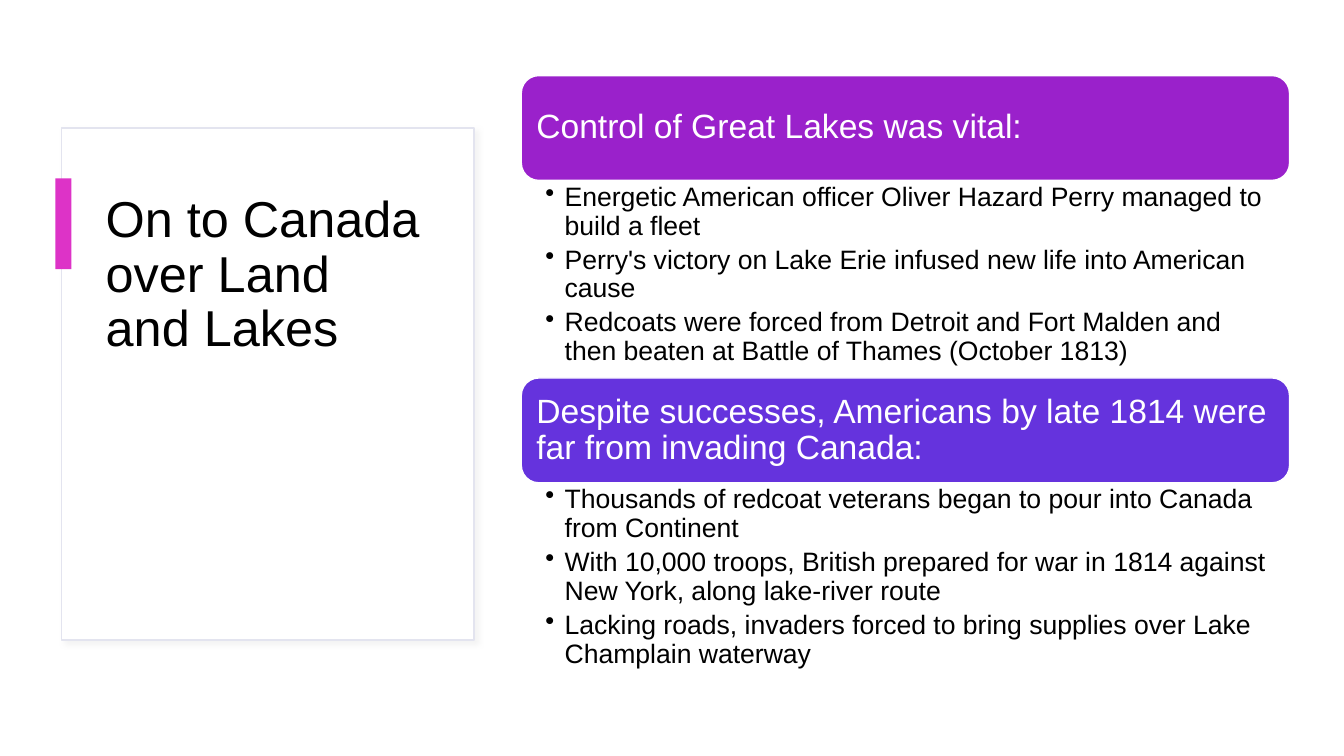
from dataclasses import dataclass

from lxml import etree
from pptx import Presentation
from pptx.dml.color import RGBColor
from pptx.enum.shapes import MSO_SHAPE
from pptx.enum.text import MSO_ANCHOR, PP_ALIGN
from pptx.oxml.ns import qn
from pptx.shapes.autoshape import Shape
from pptx.slide import Slide
from pptx.text.text import TextFrame
from pptx.util import Inches, Pt

RECTANGLE = MSO_SHAPE.RECTANGLE
ROUNDED_RECTANGLE = MSO_SHAPE.ROUNDED_RECTANGLE
TOP, MIDDLE = MSO_ANCHOR.TOP, MSO_ANCHOR.MIDDLE
LEFT = PP_ALIGN.LEFT

WHITE = RGBColor(0xFF, 0xFF, 0xFF)
BLACK = RGBColor(0x00, 0x00, 0x00)
CARD_LINE = RGBColor(0xE3, 0xE4, 0xEF)
SHADOW_GREY = RGBColor(0xD9, 0xD9, 0xD9)
PINK = RGBColor(0xDD, 0x33, 0xC7)
PURPLE = RGBColor(0x9A, 0x21, 0xCB)
VIOLET = RGBColor(0x65, 0x33, 0xDD)

FONT = "Arial"
SECTION_LEFT, SECTION_TOP, SECTION_WIDTH = 5.17, 0.75, 7.62
HEADER_HEIGHT, BULLETS_HEIGHT = 1.04, 1.96
BULLET_INDENT = 0.19


@dataclass(frozen=True)
class Box:
    left: float
    top: float
    width: float
    height: float

    def lengths(self) -> list[Inches]:
        return [Inches(value) for value in (self.left, self.top, self.width, self.height)]


@dataclass(frozen=True)
class Section:
    heading: str
    color: RGBColor
    bullets: tuple[str, ...]


SECTIONS = (
    Section("Control of Great Lakes was vital:", PURPLE, (
        "Energetic American officer Oliver Hazard Perry managed to build a fleet",
        "Perry's victory on Lake Erie infused new life into American cause",
        "Redcoats were forced from Detroit and Fort Malden and then beaten at "
        "Battle of Thames (October 1813)",
    )),
    Section("Despite successes, Americans by late 1814 were far from invading Canada:", VIOLET, (
        "Thousands of redcoat veterans began to pour into Canada from Continent",
        "With 10,000 troops, British prepared for war in 1814 against New York, "
        "along lake-river route",
        "Lacking roads, invaders forced to bring supplies over Lake Champlain waterway",
    )),
)


def add_filled_shape(slide: Slide, kind: MSO_SHAPE, box: Box, fill: RGBColor,
                     line: RGBColor | None = None) -> Shape:
    shape = slide.shapes.add_shape(kind, *box.lengths())
    shape.shadow.inherit = False
    shape.fill.solid()
    shape.fill.fore_color.rgb = fill
    if line is None:
        shape.line.fill.background()
    else:
        shape.line.color.rgb = line
        shape.line.width = Pt(1)
    return shape


def add_soft_shadow(shape: Shape) -> None:
    effects = shape._element.spPr.find(qn("a:effectLst"))
    shadow = etree.SubElement(effects, qn("a:outerShdw"), blurRad=str(Pt(4)),
                              dist=str(Pt(3)), dir="2700000", algn="tl", rotWithShape="0")
    color = etree.SubElement(shadow, qn("a:srgbClr"), val=str(SHADOW_GREY))
    etree.SubElement(color, qn("a:alpha"), val="30000")


def write_paragraphs(frame: TextFrame, texts: tuple[str, ...], size: float, color: RGBColor,
                     anchor: MSO_ANCHOR, space_after: float = 0) -> None:
    frame.word_wrap = True
    frame.vertical_anchor = anchor
    frame.text = "\n".join(texts)
    for paragraph in frame.paragraphs:
        paragraph.alignment = LEFT
        paragraph.line_spacing = 0.9
        paragraph.space_after = Pt(space_after)
        paragraph.font.name = FONT
        paragraph.font.size = Pt(size)
        paragraph.font.color.rgb = color


def set_margins(frame: TextFrame, left: float, right: float, vertical: float) -> None:
    frame.margin_left, frame.margin_right = Inches(left), Inches(right)
    frame.margin_top = frame.margin_bottom = Inches(vertical)


def add_bullet_marks(frame: TextFrame) -> None:
    for paragraph in frame.paragraphs:
        properties = paragraph._p.get_or_add_pPr()
        properties.set("marL", str(Inches(BULLET_INDENT)))
        properties.set("indent", str(-Inches(BULLET_INDENT)))
        mark = etree.Element(qn("a:buChar"), char="•")
        properties.find(qn("a:defRPr")).addprevious(mark)


def add_title_card(slide: Slide) -> None:
    card = add_filled_shape(slide, RECTANGLE, Box(0.61, 1.27, 4.09, 5.08), WHITE, CARD_LINE)
    add_soft_shadow(card)
    title = slide.shapes.add_textbox(*Box(0.95, 1.88, 3.38, 3.85).lengths())
    write_paragraphs(title.text_frame, ("On to Canada over Land and Lakes",), 36, BLACK, TOP)
    add_filled_shape(slide, RECTANGLE, Box(0.55, 1.77, 0.16, 0.9), PINK)


def add_section(slide: Slide, section: Section, top: float) -> None:
    header_box = Box(SECTION_LEFT, top, SECTION_WIDTH, HEADER_HEIGHT)
    header = add_filled_shape(slide, ROUNDED_RECTANGLE, header_box, section.color, WHITE)
    set_margins(header.text_frame, 0.1, 0.1, 0.1)
    write_paragraphs(header.text_frame, (section.heading,), 24, WHITE, MIDDLE)

    bullets_box = Box(SECTION_LEFT, top + HEADER_HEIGHT, SECTION_WIDTH, BULLETS_HEIGHT)
    bullets = slide.shapes.add_textbox(*bullets_box.lengths())
    set_margins(bullets.text_frame, 0.24, 0.19, 0.03)
    write_paragraphs(bullets.text_frame, section.bullets, 19, BLACK, TOP, space_after=3.8)
    add_bullet_marks(bullets.text_frame)


def main() -> None:
    presentation = Presentation()
    presentation.slide_width = Inches(13.33)
    presentation.slide_height = Inches(7.5)
    slide = presentation.slides.add_slide(presentation.slide_layouts[6])
    add_title_card(slide)
    for index, section in enumerate(SECTIONS):
        add_section(slide, section, SECTION_TOP + index * (HEADER_HEIGHT + BULLETS_HEIGHT))
    presentation.save("out.pptx")


if __name__ == "__main__":
    main()
